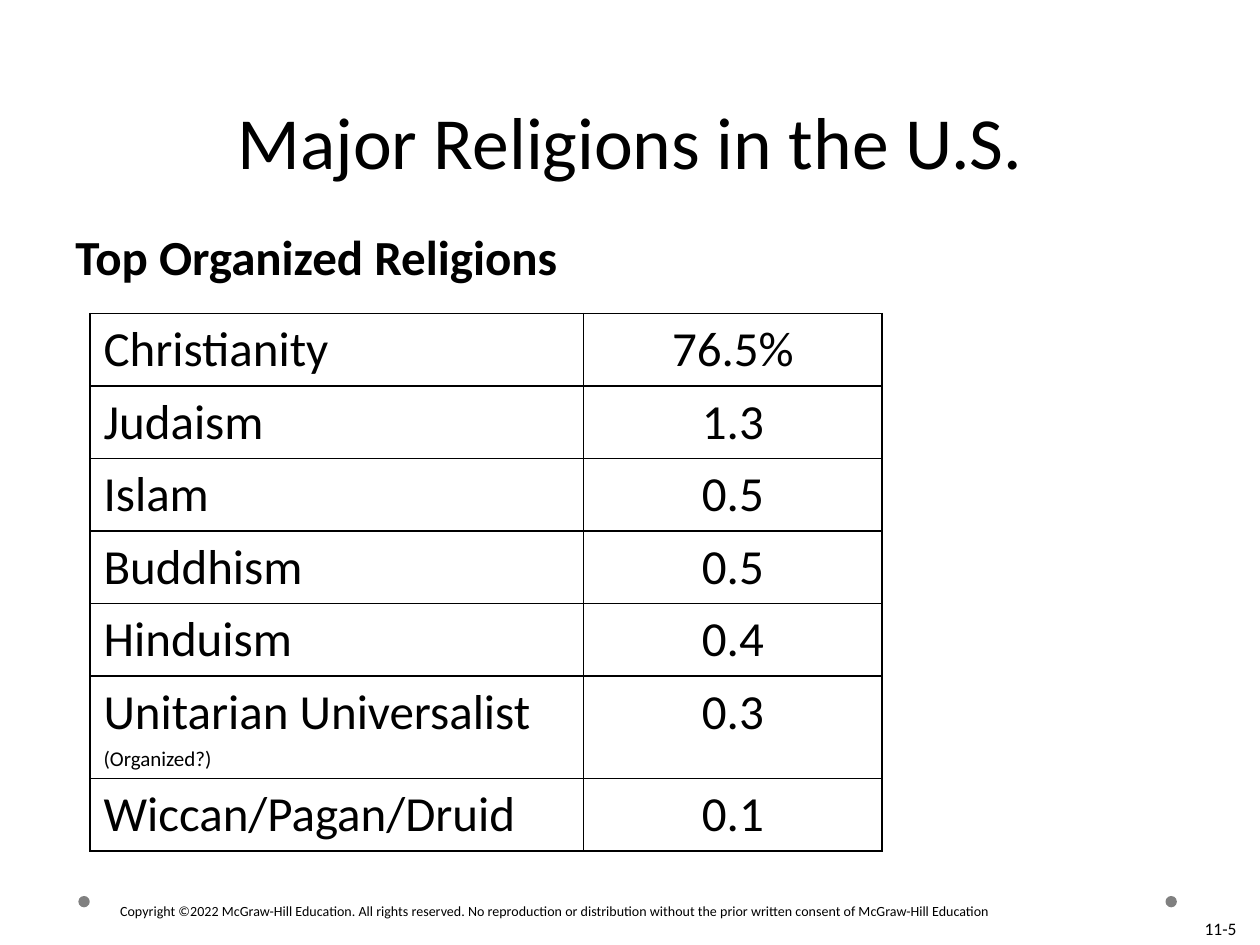
"""Build the slide on major religions in the U.S."""
from dataclasses import dataclass

import lxml.etree
import pptx
import pptx.dml.color
import pptx.enum.shapes
import pptx.enum.text
import pptx.oxml.ns
import pptx.util

Pt = pptx.util.Pt
Align = pptx.enum.text.PP_ALIGN
Anchor = pptx.enum.text.MSO_ANCHOR
FONT = "Calibri"
BLACK = "000000"
GREY = "808080"
BODY_SIZE = 28
NOTE_SIZE = 12
ROW_HEIGHT = 41.4
NOTE_HEIGHT = 17


@dataclass
class Box:
    left: float
    top: float
    width: float
    height: float

    def lengths(self) -> tuple:
        return tuple(Pt(value) for value in (self.left, self.top, self.width, self.height))


@dataclass
class Label:
    text: str
    box: Box
    size: float
    align: Align = Align.LEFT
    anchor: Anchor = Anchor.TOP
    bold: bool = False


@dataclass
class Religion:
    name: str
    share: str
    note: str = ""


TITLE = Label("Major Religions in the U.S.", Box(36, 20, 648, 88.6), 42, Align.CENTER, Anchor.BOTTOM)
LABELS = [
    Label("Top Organized Religions", Box(36, 126, 648, 39.6), BODY_SIZE, bold=True),
    Label(
        "Copyright ©2022 McGraw-Hill Education. All rights reserved. No reproduction or "
        "distribution without the prior written consent of McGraw-Hill Education",
        Box(61.6, 512, 582, 17.3), 8,
    ),
    Label("11-5", Box(546, 504, 167.6, 36), 10, Align.RIGHT, Anchor.BOTTOM),
]
DOTS = [Box(left, 512, 6.5, 6.5) for left in (44.8, 666)]
RELIGIONS = [
    Religion("Christianity", "76.5%"),
    Religion("Judaism", "1.3"),
    Religion("Islam", "0.5"),
    Religion("Buddhism", "0.5"),
    Religion("Hinduism", "0.4"),
    Religion("Unitarian Universalist", "0.3", "(Organized?)"),
    Religion("Wiccan/Pagan/Druid", "0.1"),
]
TABLE_LEFT, TABLE_TOP = 51.3, 179.2
COLUMN_WIDTHS = (282.2, 170.6)


def color(value: str) -> pptx.dml.color.RGBColor:
    return pptx.dml.color.RGBColor.from_string(value)


def format_paragraph(paragraph, size: float, align: Align, bold: bool = False) -> None:
    paragraph.alignment = align
    paragraph.font.name = FONT
    paragraph.font.size = Pt(size)
    paragraph.font.bold = bold
    paragraph.font.color.rgb = color(BLACK)


def write_label(shape, label: Label) -> None:
    shape.left, shape.top, shape.width, shape.height = label.box.lengths()
    frame = shape.text_frame
    frame.word_wrap = True
    frame.auto_size = pptx.enum.text.MSO_AUTO_SIZE.NONE
    frame.vertical_anchor = label.anchor
    frame.text = label.text
    format_paragraph(frame.paragraphs[0], label.size, label.align, label.bold)


def add_dot(slide, box: Box) -> None:
    dot = slide.shapes.add_shape(pptx.enum.shapes.MSO_SHAPE.OVAL, *box.lengths())
    dot.shadow.inherit = False
    dot.fill.solid()
    dot.fill.fore_color.rgb = color(GREY)
    dot.line.fill.background()


def add_borders(cell) -> None:
    properties = cell._tc.get_or_add_tcPr()
    qn = pptx.oxml.ns.qn
    for side in ("a:lnL", "a:lnR", "a:lnT", "a:lnB"):
        line = lxml.etree.SubElement(properties, qn(side), w=str(Pt(1)))
        fill = lxml.etree.SubElement(line, qn("a:solidFill"))
        lxml.etree.SubElement(fill, qn("a:srgbClr"), val=BLACK)


def write_cell(cell, text: str, align: Align, note: str = "") -> None:
    add_borders(cell)
    cell.fill.background()
    cell.margin_left = cell.margin_right = Pt(7.9)
    cell.margin_top = cell.margin_bottom = Pt(3.6)
    frame = cell.text_frame
    frame.text = text
    format_paragraph(frame.paragraphs[0], BODY_SIZE, align)
    if note:
        paragraph = frame.add_paragraph()
        paragraph.text = note
        paragraph.space_before = Pt(NOTE_SIZE * 0.2)
        format_paragraph(paragraph, NOTE_SIZE, align)


def add_religion_table(slide, religions: list[Religion]) -> None:
    heights = [ROW_HEIGHT + (NOTE_HEIGHT if religion.note else 0) for religion in religions]
    box = Box(TABLE_LEFT, TABLE_TOP, sum(COLUMN_WIDTHS), sum(heights))
    table = slide.shapes.add_table(len(religions), len(COLUMN_WIDTHS), *box.lengths()).table
    table.first_row = False
    table.horz_banding = False
    for column, width in zip(table.columns, COLUMN_WIDTHS):
        column.width = Pt(width)
    for row, height, religion in zip(table.rows, heights, religions):
        row.height = Pt(height)
        write_cell(row.cells[0], religion.name, Align.LEFT, religion.note)
        write_cell(row.cells[1], religion.share, Align.CENTER)


def main() -> None:
    presentation = pptx.Presentation()
    presentation.slide_width = Pt(720)
    presentation.slide_height = Pt(540)
    slide = presentation.slides.add_slide(presentation.slide_layouts[5])
    write_label(slide.shapes.title, TITLE)
    for dot in DOTS:
        add_dot(slide, dot)
    for label in LABELS:
        write_label(slide.shapes.add_textbox(*label.box.lengths()), label)
    add_religion_table(slide, RELIGIONS)
    presentation.save("out.pptx")


if __name__ == "__main__":
    main()
